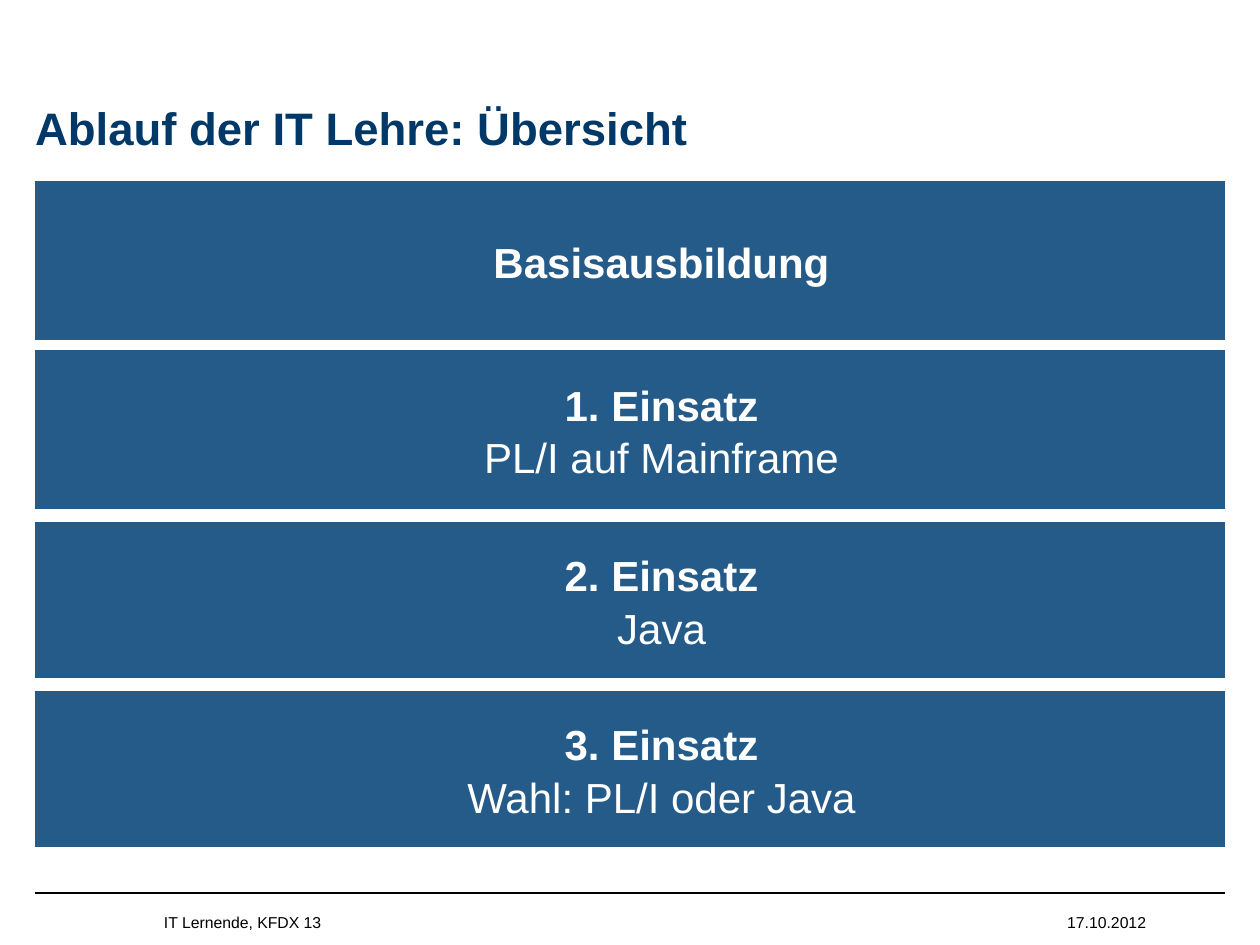
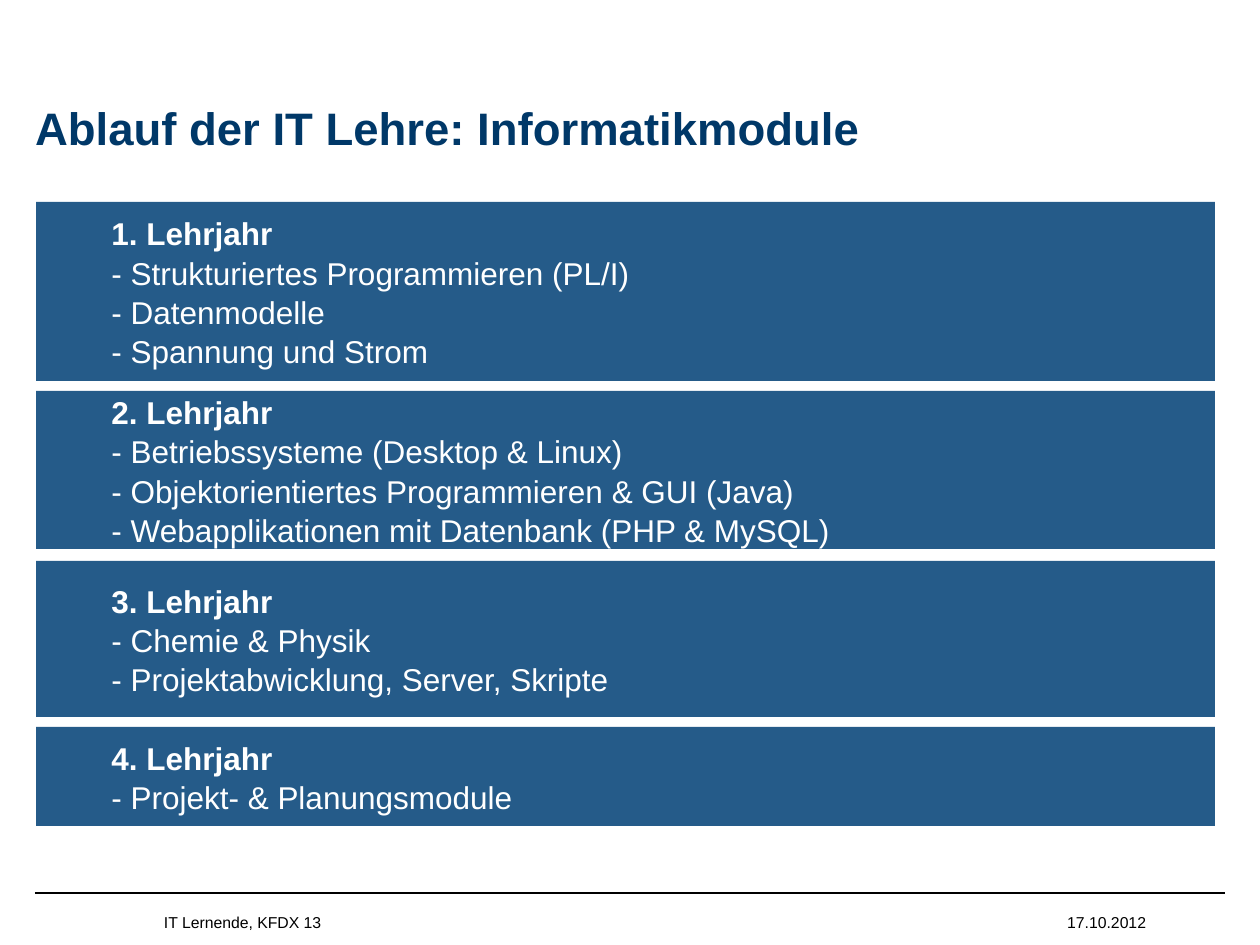
"""Two slides on the course of an IT apprenticeship."""
import pptx
import pptx.dml.color
import pptx.enum.shapes
import pptx.enum.text
import pptx.oxml.ns
import pptx.util
import lxml.etree

PX = 914400 / 126
FONT = "Arial"
NAVY, BLUE, WHITE, BLACK = "003868", "255B89", "FFFFFF", "000000"
ALIGN = pptx.enum.text.PP_ALIGN
ANCHOR = pptx.enum.text.MSO_ANCHOR
KIND = pptx.enum.shapes


def color(code):
    return pptx.dml.color.RGBColor.from_string(code)


def write(shape, lines, size, code, align, anchor, bold=False):
    frame = shape.text_frame
    frame.word_wrap = True
    frame.vertical_anchor = anchor
    for num, line in enumerate(lines):
        para = frame.paragraphs[0] if num == 0 else frame.add_paragraph()
        para.text = line
        para.alignment = align
        para.font.name = FONT
        para.font.size = pptx.util.Pt(size)
        para.font.bold = bold and num == 0
        para.font.color.rgb = color(code)
    return frame


# title, text size, alignment, left, width, bands as (top, height, lines)
PAGES = [
    ("Ablauf der IT Lehre: Übersicht", 24, ALIGN.CENTER, 35, 1190, [
        (181, 159, ["Basisausbildung"]),
        (350, 159, ["1. Einsatz", "PL/I auf Mainframe"]),
        (522, 156, ["2. Einsatz", "Java"]),
        (691, 156, ["3. Einsatz", "Wahl: PL/I oder Java"]),
    ]),
    ("Ablauf der IT Lehre: Informatikmodule", 18, ALIGN.LEFT, 36, 1179, [
        (202, 179, ["1. Lehrjahr", "- Strukturiertes Programmieren (PL/I)",
                    "- Datenmodelle", "- Spannung und Strom"]),
        (391, 158, ["2. Lehrjahr", "- Betriebssysteme (Desktop & Linux)",
                    "- Objektorientiertes Programmieren & GUI (Java)",
                    "- Webapplikationen mit Datenbank (PHP & MySQL)"]),
        (561, 156, ["3. Lehrjahr", "- Chemie & Physik",
                    "- Projektabwicklung, Server, Skripte"]),
        (727, 99, ["4. Lehrjahr", "- Projekt- & Planungsmodule"]),
    ]),
]

deck = pptx.Presentation()
deck.slide_width = pptx.util.Inches(10)
deck.slide_height = pptx.util.Inches(7.5)

for title, size, align, left, width, bands in PAGES:
    slide = deck.slides.add_slide(deck.slide_layouts[6])

    ends = [int(n * PX) for n in (35, 893, 1225, 893)]
    rule = slide.shapes.add_connector(KIND.MSO_CONNECTOR.STRAIGHT, *ends)
    rule.line.color.rgb = color(BLACK)
    rule.line.width = pptx.util.Pt(1)
    lxml.etree.SubElement(rule.element.spPr, pptx.oxml.ns.qn("a:effectLst"))

    for text, spot, points, code, side, bold in [
        (title, (35, 55, 1190, 100), 26, NAVY, ALIGN.LEFT, True),
        ("17.10.2012", (848, 907, 298, 25), 9, BLACK, ALIGN.RIGHT, False),
        ("IT Lernende, KFDX 13", (164, 907, 679, 25), 9, BLACK, ALIGN.LEFT, False),
    ]:
        box = slide.shapes.add_textbox(*[int(n * PX) for n in spot])
        frame = write(box, [text], points, code, side, ANCHOR.BOTTOM, bold)
        frame.margin_left = frame.margin_right = 0
        frame.margin_top = frame.margin_bottom = 0

    for top, height, lines in bands:
        spot = [int(n * PX) for n in (left, top, width, height)]
        band = slide.shapes.add_shape(KIND.MSO_SHAPE.RECTANGLE, *spot)
        band.shadow.inherit = False
        band.fill.solid()
        band.fill.fore_color.rgb = color(BLUE)
        band.line.fill.background()
        frame = write(band, lines, size, WHITE, align, ANCHOR.MIDDLE, True)
        for para in frame.paragraphs:
            para.level = 1
            para.line_spacing = 1.04
            props = para._p.get_or_add_pPr()
            props.set("marL", str(int(63 * PX)))
            props.set("indent", "0")

deck.save("out.pptx")
